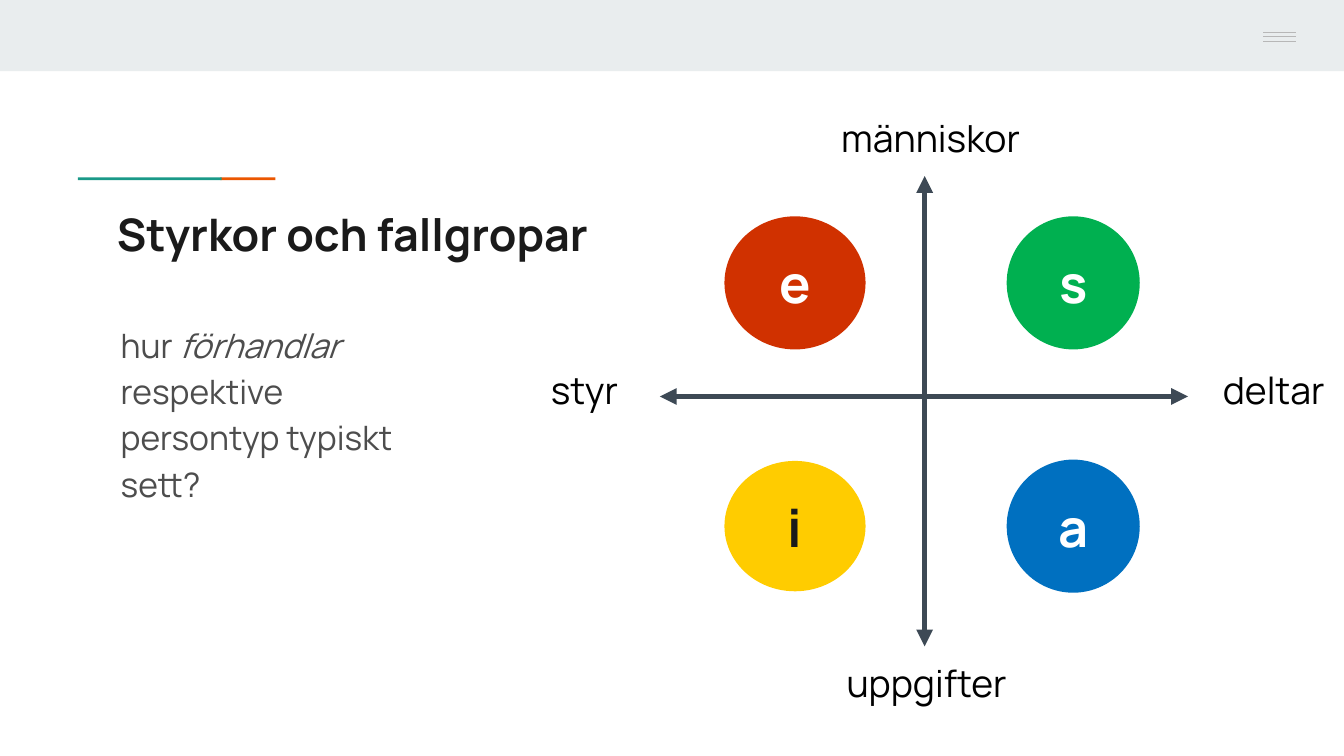
"""Build a slide with a four-field map of personality types and a question."""
from dataclasses import dataclass

from lxml.etree import SubElement
from pptx import Presentation
from pptx.dml.color import RGBColor
from pptx.enum.shapes import MSO_CONNECTOR, MSO_SHAPE
from pptx.enum.text import MSO_ANCHOR, MSO_AUTO_SIZE, PP_ALIGN
from pptx.oxml.ns import qn
from pptx.slide import Slide
from pptx.text.text import TextFrame, _Paragraph
from pptx.util import Emu, Pt

PX = 9144
WIDE = 1000 * PX
HIGH = WIDE * 9 // 16
FONT = "Manrope"
WHITE = RGBColor(0xFF, 0xFF, 0xFF)
BLACK = RGBColor(0x00, 0x00, 0x00)
INK = RGBColor(0x1A, 0x1A, 0x1A)
GRAY = RGBColor(0x4D, 0x4D, 0x4D)
SILVER = RGBColor(0xB7, 0xB7, 0xB7)
SLATE = RGBColor(0x3D, 0x49, 0x55)
MIST = RGBColor(0xE9, 0xED, 0xEE)
ORANGE = RGBColor(0xEB, 0x56, 0x00)
TEAL = RGBColor(0x1A, 0x99, 0x88)
RED = RGBColor(0xD0, 0x31, 0x00)
YELLOW = RGBColor(0xFF, 0xCC, 0x00)
GREEN = RGBColor(0x00, 0xB0, 0x50)
BLUE = RGBColor(0x00, 0x70, 0xC0)


@dataclass(frozen=True)
class Box:
    x: int
    y: int
    w: int
    h: int

    def emu(self) -> tuple[Emu, ...]:
        return tuple(Emu(n * PX) for n in (self.x, self.y, self.w, self.h))


@dataclass(frozen=True)
class Bar:
    box: Box
    fill: RGBColor


@dataclass(frozen=True)
class Rule:
    x1: int
    y1: int
    x2: int
    y2: int
    color: RGBColor
    width: float
    arrows: bool = False


@dataclass(frozen=True)
class Disc:
    text: str
    box: Box
    fill: RGBColor
    color: RGBColor = WHITE


@dataclass(frozen=True)
class Label:
    text: str
    box: Box


BARS = (
    Bar(Box(0, 0, 1000, 53), MIST),
    Bar(Box(164, 132, 41, 2), ORANGE),
    Bar(Box(58, 132, 107, 2), TEAL),
)
RULES = (
    *(Rule(940, y, 964, y, SILVER, 0.75) for y in (24, 27, 31)),
    Rule(688, 131, 688, 481, SLATE, 3, True),
    Rule(491, 295, 884, 295, SLATE, 3, True),
)
DISCS = (
    Disc("e", Box(539, 161, 105, 99), RED),
    Disc("i", Box(539, 343, 105, 97), YELLOW, INK),
    Disc("s", Box(749, 161, 99, 99), GREEN),
    Disc("a", Box(749, 342, 99, 99), BLUE),
)
LABELS = (
    Label("människor", Box(616, 81, 242, 44)),
    Label("uppgifter", Box(620, 486, 175, 44)),
    Label("styr", Box(400, 268, 168, 44)),
    Label("deltar", Box(900, 268, 100, 44)),
)


def style(para: _Paragraph, size: int, color: RGBColor, bold: bool = False) -> None:
    font = para.font
    font.name = FONT
    font.size = Pt(size)
    font.bold = bold
    font.color.rgb = color


def inset(frame: TextFrame, side: int, edge: int) -> None:
    frame.margin_left = frame.margin_right = Emu(side * PX)
    frame.margin_top = frame.margin_bottom = Emu(edge * PX)


def add_bar(slide: Slide, bar: Bar) -> None:
    shape = slide.shapes.add_shape(MSO_SHAPE.RECTANGLE, *bar.box.emu())
    shape.shadow.inherit = False
    shape.fill.solid()
    shape.fill.fore_color.rgb = bar.fill
    shape.line.fill.background()


def add_rule(slide: Slide, rule: Rule) -> None:
    ends = (Emu(n * PX) for n in (rule.x1, rule.y1, rule.x2, rule.y2))
    link = slide.shapes.add_connector(MSO_CONNECTOR.STRAIGHT, *ends)
    link.line.color.rgb = rule.color
    link.line.width = Pt(rule.width)
    props = link.line._get_or_add_ln()
    if rule.arrows:
        for tag in ("a:headEnd", "a:tailEnd"):
            SubElement(props, qn(tag), type="triangle")
    SubElement(props.getparent(), qn("a:effectLst"))


def add_disc(slide: Slide, disc: Disc) -> None:
    shape = slide.shapes.add_shape(MSO_SHAPE.OVAL, *disc.box.emu())
    shape.shadow.inherit = False
    shape.fill.solid()
    shape.fill.fore_color.rgb = disc.fill
    shape.line.fill.background()
    frame = shape.text_frame
    inset(frame, 10, 10)
    frame.vertical_anchor = MSO_ANCHOR.MIDDLE
    para = frame.paragraphs[0]
    para.text = disc.text
    para.alignment = PP_ALIGN.CENTER
    style(para, 28, disc.color, True)


def add_frame(slide: Slide, box: Box) -> TextFrame:
    frame = slide.shapes.add_textbox(*box.emu()).text_frame
    frame.word_wrap = True
    return frame


def add_label(slide: Slide, label: Label) -> None:
    frame = add_frame(slide, label.box)
    frame.auto_size = MSO_AUTO_SIZE.SHAPE_TO_FIT_TEXT
    para = frame.paragraphs[0]
    para.text = label.text
    style(para, 20, BLACK)


def add_title(slide: Slide) -> None:
    frame = add_frame(slide, Box(80, 144, 841, 59))
    inset(frame, 7, 4)
    frame.vertical_anchor = MSO_ANCHOR.MIDDLE
    para = frame.paragraphs[0]
    para.text = "Styrkor och fallgropar"
    style(para, 24, INK, True)


def add_body(slide: Slide) -> None:
    frame = add_frame(slide, Box(80, 227, 413, 247))
    inset(frame, 10, 10)
    para = frame.paragraphs[0]
    para.line_spacing = 1.15
    para.add_run().text = "hur "
    verb = para.add_run()
    verb.text = "förhandlar"
    verb.font.italic = True
    for text in ("respektive", "persontyp typiskt", "sett?"):
        para.add_line_break()
        para.add_run().text = text
    style(para, 18, GRAY)


def main() -> None:
    deck = Presentation()
    deck.slide_width = Emu(WIDE)
    deck.slide_height = Emu(HIGH)
    slide = deck.slides.add_slide(deck.slide_layouts[6])
    for bar in BARS:
        add_bar(slide, bar)
    add_title(slide)
    add_body(slide)
    for rule in RULES:
        add_rule(slide, rule)
    for disc in DISCS:
        add_disc(slide, disc)
    for label in LABELS:
        add_label(slide, label)
    deck.save("out.pptx")


if __name__ == "__main__":
    main()
